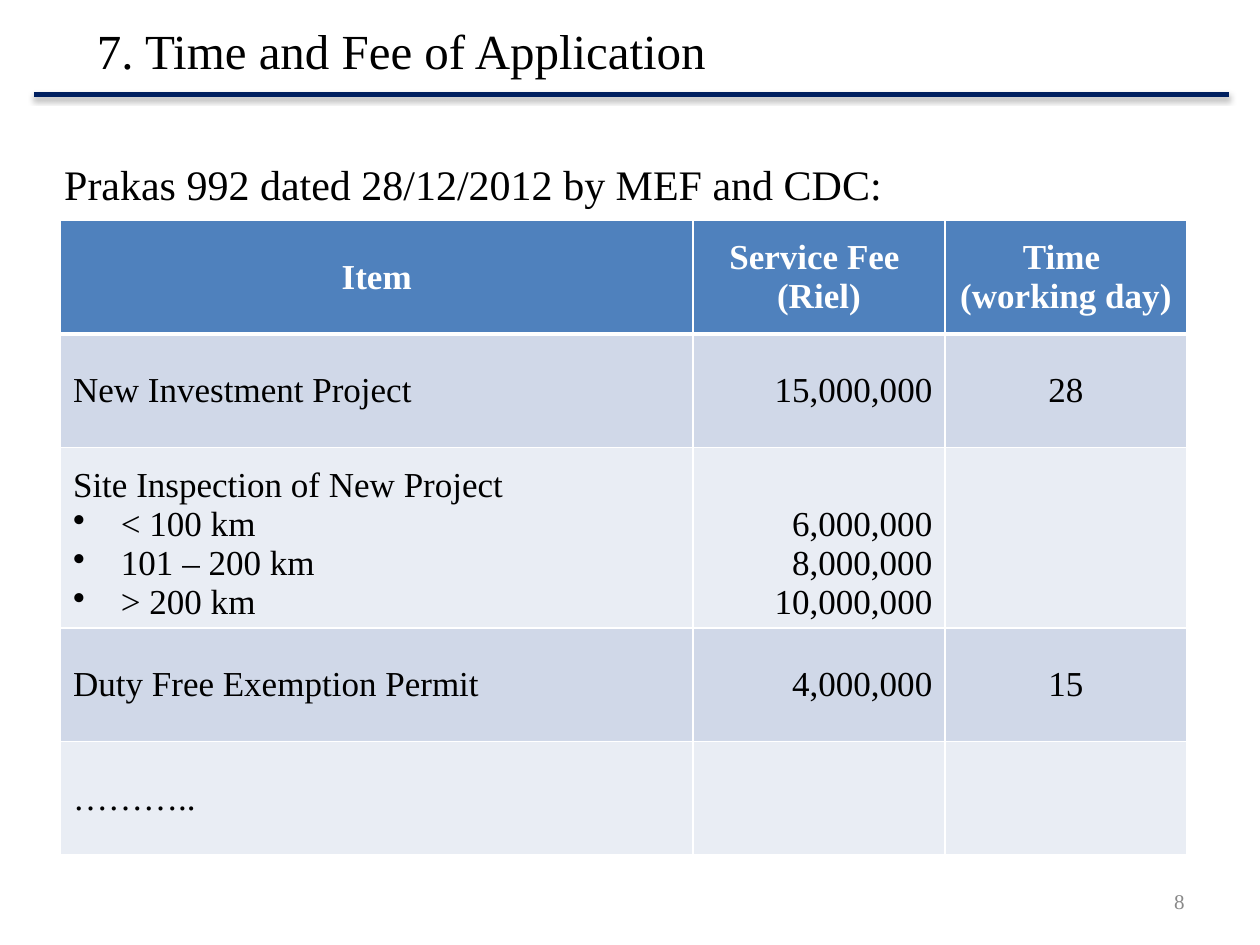
import pptx
import pptx.dml.color
import pptx.enum.shapes
import pptx.enum.text
import pptx.oxml
import pptx.oxml.ns
import pptx.util

Inches = pptx.util.Inches
Pt = pptx.util.Pt
ALIGN = pptx.enum.text.PP_ALIGN
ANCHOR = pptx.enum.text.MSO_ANCHOR

# Content
TITLE = "7. Time and Fee of Application"
INTRODUCTION = "Prakas 992 dated 28/12/2012 by MEF and CDC:"
PAGE_NUMBER = "8"
BULLET = "• "
FEE_ROWS = [
    (["Item"], ["Service Fee ", "(Riel)"], ["Time ", "(working day) "]),
    (["New Investment Project"], ["15,000,000"], ["28"]),
    (["Site Inspection of New Project", "• < 100 km", "• 101 – 200 km", "• > 200 km"],
     ["6,000,000", "8,000,000", "10,000,000"], []),
    (["Duty Free Exemption Permit"], ["4,000,000"], ["15"]),
    (["……….."], [], []),
]

# Look
THEME = {
    "font": "Times New Roman",
    "text": "000000", "muted": "898989", "inverse": "FFFFFF",
    "rule": "002060", "border": "FFFFFF",
    "header": "4F81BD", "bands": ("D0D8E8", "E9EDF4"),
    "title_size": 28, "introduction_size": 24, "table_size": 20, "number_size": 12,
}

# Layout, in inches
COLUMN_WIDTHS = (5.02, 2.0, 1.92)
COLUMN_ALIGNMENTS = (ALIGN.LEFT, ALIGN.RIGHT, ALIGN.CENTER)
ROW_HEIGHT, TALL_ROW_HEIGHT = 0.9, 1.33
BULLET_INDENT = 0.38


def color(name):
    return pptx.dml.color.RGBColor.from_string(name)


def set_attributes(target, values):
    for name, value in values.items():
        setattr(target, name, value)


def write_run(paragraph, text, size, text_color, bold=False):
    run = paragraph.add_run()
    run.text = text
    set_attributes(run.font, {"name": THEME["font"], "size": Pt(size), "bold": bold})
    run.font.color.rgb = color(text_color)


def add_text(slide, box, text, size, text_color, frame_format, paragraph_format):
    frame = slide.shapes.add_textbox(*map(Inches, box)).text_frame
    set_attributes(frame, {"word_wrap": True, **frame_format})
    paragraph = frame.paragraphs[0]
    set_attributes(paragraph, paragraph_format)
    write_run(paragraph, text, size, text_color)


def parse_drawing(tag, content):
    namespace = pptx.oxml.ns.nsdecls("a")
    return pptx.oxml.parse_xml(f"<a:{tag} {namespace}>{content}</a:{tag}>")


def add_bullet(paragraph):
    properties = paragraph._p.get_or_add_pPr()
    properties.set("marL", str(Inches(BULLET_INDENT)))
    properties.set("indent", str(-Inches(BULLET_INDENT)))
    bullet = parse_drawing("buChar", "")
    bullet.set("char", BULLET.strip())
    properties.append(bullet)


def set_borders(cell, bottom_width):
    properties = cell._tc.get_or_add_tcPr()
    widths = {"lnL": 1, "lnR": 1, "lnT": 1, "lnB": bottom_width}
    for position, (side, width) in enumerate(widths.items()):
        line = parse_drawing(
            side, f'<a:solidFill><a:srgbClr val="{THEME["border"]}"/></a:solidFill>')
        line.set("w", str(Pt(width)))
        properties.insert(position, line)


def fill_cell(cell, lines, alignment, anchor, fill, text_color, is_header):
    cell.vertical_anchor = anchor
    cell.fill.solid()
    cell.fill.fore_color.rgb = color(fill)
    set_borders(cell, 3 if is_header else 1)
    frame = cell.text_frame
    for index, line in enumerate(lines):
        paragraph = frame.add_paragraph() if index else frame.paragraphs[0]
        paragraph.alignment = alignment
        if line.startswith(BULLET):
            add_bullet(paragraph)
        write_run(paragraph, line.removeprefix(BULLET), THEME["table_size"],
                  text_color, is_header)


def add_rule(slide):
    rule = slide.shapes.add_connector(
        pptx.enum.shapes.MSO_CONNECTOR.STRAIGHT,
        Inches(0.27), Inches(0.75), Inches(9.75), Inches(0.75))
    rule.line.color.rgb = color(THEME["rule"])
    rule.line.width = Pt(3)
    rule._element.spPr.append(parse_drawing(
        "effectLst",
        f'<a:outerShdw blurRad="{Pt(3.1)}" dist="{Pt(1.8)}" dir="5400000" rotWithShape="0">'
        '<a:srgbClr val="000000"><a:alpha val="35000"/></a:srgbClr></a:outerShdw>'))


def add_fee_table(slide):
    heights = [TALL_ROW_HEIGHT if len(row[0]) > 1 else ROW_HEIGHT for row in FEE_ROWS]
    table = slide.shapes.add_table(
        len(FEE_ROWS), len(COLUMN_WIDTHS), Inches(0.48), Inches(1.75),
        Inches(sum(COLUMN_WIDTHS)), Inches(sum(heights))).table
    for column, width in zip(table.columns, COLUMN_WIDTHS):
        column.width = Inches(width)
    for row_index, row in enumerate(FEE_ROWS):
        table.rows[row_index].height = Inches(heights[row_index])
        is_header = row_index == 0
        fill = THEME["header"] if is_header else THEME["bands"][(row_index - 1) % 2]
        text_color = THEME["inverse"] if is_header else THEME["text"]
        for column_index, lines in enumerate(row):
            alignment = ALIGN.CENTER if is_header else COLUMN_ALIGNMENTS[column_index]
            # Several fees line up with the bullets at the foot of their row
            anchor = ANCHOR.BOTTOM if len(lines) > 2 else ANCHOR.MIDDLE
            fill_cell(table.cell(row_index, column_index), lines, alignment, anchor,
                      fill, text_color, is_header)


def main():
    presentation = pptx.Presentation()
    set_attributes(presentation, {"slide_width": Inches(10), "slide_height": Inches(7.5)})
    slide = presentation.slides.add_slide(presentation.slide_layouts[6])

    # Introduction, page number and title
    add_text(slide, (0.33, 1.17, 9.17, 5.75), INTRODUCTION,
             THEME["introduction_size"], THEME["text"],
             {"margin_left": Inches(0.18)}, {"line_spacing": 1.1, "space_after": Pt(12)})
    add_text(slide, (7.17, 6.95, 2.33, 0.4), PAGE_NUMBER,
             THEME["number_size"], THEME["muted"],
             {"vertical_anchor": ANCHOR.MIDDLE}, {"alignment": ALIGN.RIGHT})
    add_text(slide, (0.17, 0.08, 8.93, 0.64), TITLE,
             THEME["title_size"], THEME["text"],
             {"vertical_anchor": ANCHOR.MIDDLE, "margin_left": Inches(0.6)}, {})

    # Rule under the title, then the fees
    add_rule(slide)
    add_fee_table(slide)
    presentation.save("out.pptx")


if __name__ == "__main__":
    main()
